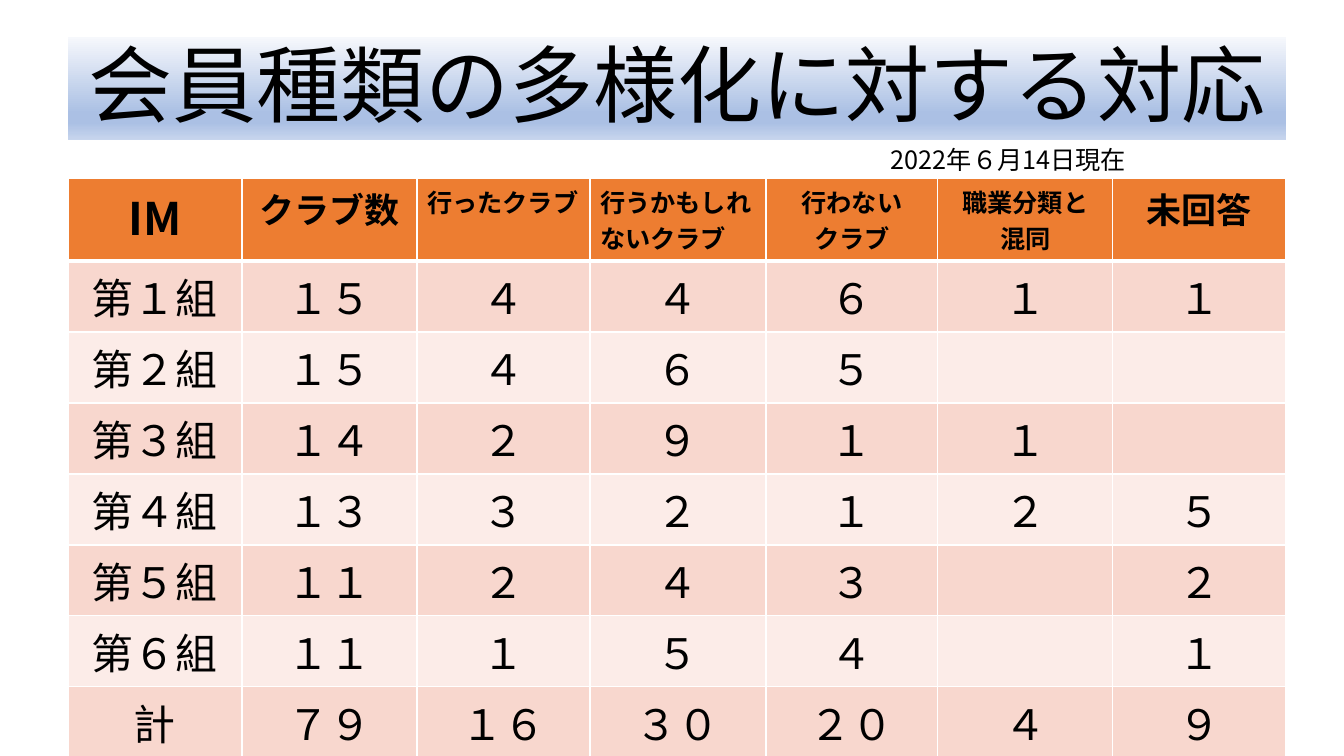
import copy
import pptx
import pptx.dml.color
import pptx.enum.text
import pptx.oxml
import pptx.oxml.ns
import pptx.util

PX = 9071
FONT = "Noto Sans CJK JP"
COLORS = {"text": "000000", "border": "FFFFFF", "header": "ED7D31", "odd": "F8D7CE", "even": "FCECE8"}
TITLE_STOPS = [(0, "F6F8FC"), (0.74, "ABC0E4"), (0.83, "ABC0E4"), (1, "C7D5ED")]
ALIGN = pptx.enum.text.PP_ALIGN
ANCHOR = pptx.enum.text.MSO_ANCHOR
rgb = pptx.dml.color.RGBColor.from_string


def write_text(text_frame, text, size, bold=False, align=ALIGN.LEFT):
    text_frame.text = text
    text_frame.word_wrap = True
    for paragraph in text_frame.paragraphs:
        paragraph.alignment = align
        for run in paragraph.runs:
            run.font.color.rgb = rgb(COLORS["text"])
            for name, value in {"name": FONT, "size": pptx.util.Pt(size), "bold": bold}.items():
                setattr(run.font, name, value)
            east_asian = pptx.oxml.parse_xml(f'<a:ea {pptx.oxml.ns.nsdecls("a")} typeface="{FONT}"/>')
            run.font._element.find(pptx.oxml.ns.qn("a:latin")).addnext(east_asian)


def format_cell(cell, fill, top, bottom):
    properties = cell._tc.get_or_add_tcPr()
    for side, points in {"L": 1, "R": 1, "T": top, "B": bottom}.items():
        properties.append(pptx.oxml.parse_xml(
            f'<a:ln{side} {pptx.oxml.ns.nsdecls("a")} w="{points * 12700}"><a:solidFill>'
            f'<a:srgbClr val="{COLORS["border"]}"/></a:solidFill></a:ln{side}>'))
    cell.fill.solid()
    cell.fill.fore_color.rgb = rgb(COLORS[fill])


presentation = pptx.Presentation()
presentation.slide_width = 1344 * PX
presentation.slide_height = 756 * PX
slide = presentation.slides.add_slide(presentation.slide_layouts[5])

title = slide.shapes.title
for name, value in {"left": 68, "top": 37, "width": 1218, "height": 103}.items():
    setattr(title, name, value * PX)
title.fill.gradient()
title.fill.gradient_angle = 270
stop_list = title._element.spPr.find(".//" + pptx.oxml.ns.qn("a:gsLst"))
for extra in range(len(TITLE_STOPS) - len(stop_list)):
    stop_list.append(copy.deepcopy(stop_list[0]))
for stop, (position, color) in zip(title.fill.gradient_stops, TITLE_STOPS):
    stop.position = position
    stop.color.rgb = rgb(color)
write_text(title.text_frame, "会員種類の多様化に対する対応", 60, align=ALIGN.CENTER)
title.text_frame.auto_size = pptx.enum.text.MSO_AUTO_SIZE.NONE
title.text_frame.vertical_anchor = ANCHOR.BOTTOM
title.text_frame.paragraphs[0].line_spacing = 0.9

headers = [
    ("IM", 32, ALIGN.CENTER),
    ("クラブ数", 25, ALIGN.CENTER),
    ("行ったクラブ", 18, ALIGN.LEFT),
    ("行うかもしれないクラブ", 18, ALIGN.LEFT),
    ("行わない\nクラブ", 18, ALIGN.CENTER),
    ("職業分類と\n混同", 18, ALIGN.CENTER),
    ("未回答", 25, ALIGN.CENTER),
]
groups = [
    ("第１組", "１５", "４", "４", "６", "１", "１"),
    ("第２組", "１５", "４", "６", "５", "", ""),
    ("第３組", "１４", "２", "９", "１", "１", ""),
    ("第４組", "１３", "３", "２", "１", "２", "５"),
    ("第５組", "１１", "２", "４", "３", "", "２"),
    ("第６組", "１１", "１", "５", "４", "", "１"),
    ("計", "７９", "１６", "３０", "２０", "４", "９"),
]
column_widths = [174, 175, 173, 176, 172, 175, 173]
row_heights = [72] + [69] * 6 + [61]
table = slide.shapes.add_table(
    len(row_heights), len(column_widths), 68 * PX, 178 * PX,
    sum(column_widths) * PX, sum(row_heights) * PX).table
for column, width in zip(table.columns, column_widths):
    column.width = width * PX
for row, height in zip(table.rows, row_heights):
    row.height = height * PX
for index, (text, size, align) in enumerate(headers):
    cell = table.cell(0, index)
    format_cell(cell, "header", 1, 3)
    write_text(cell.text_frame, text, size, True, align)
for row_number, group in enumerate(groups, 1):
    for index, text in enumerate(group):
        cell = table.cell(row_number, index)
        format_cell(cell, "odd" if row_number % 2 else "even", 3 if row_number == 1 else 1, 1)
        write_text(cell.text_frame, text, 30, align=ALIGN.CENTER)

date = slide.shapes.add_textbox(881 * PX, 140 * PX, 413 * PX, 38 * PX)
write_text(date.text_frame, "2022年６月14日現在", 18)
date.text_frame.vertical_anchor = ANCHOR.MIDDLE

presentation.save("out.pptx")
